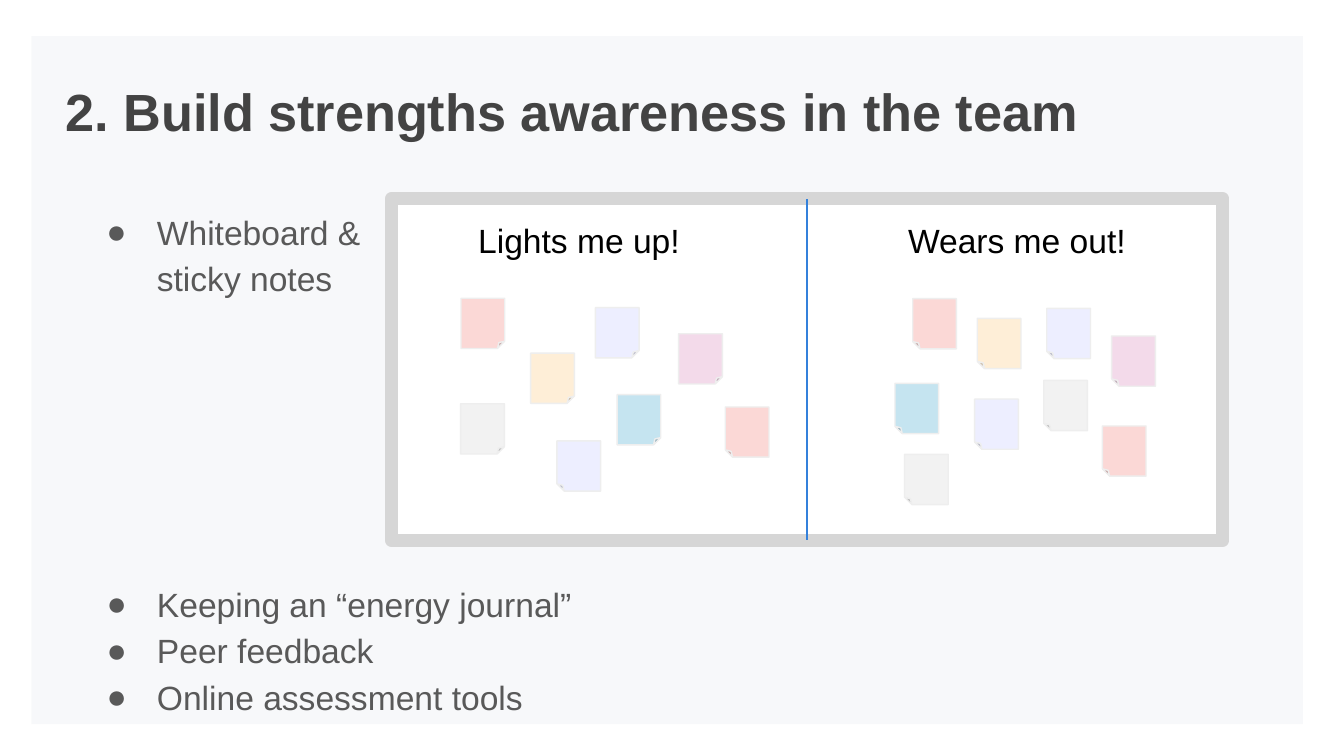
"""Build the strengths awareness slide with its whiteboard of sticky notes."""
from dataclasses import dataclass

import lxml.etree
import pptx
import pptx.dml.color
import pptx.enum.shapes
import pptx.enum.text
import pptx.oxml.ns
import pptx.util

Pt = pptx.util.Pt
SHAPES = pptx.enum.shapes.MSO_SHAPE
ALIGN = pptx.enum.text.PP_ALIGN
PINK, MAUVE, CREAM = "FBD8D6", "F3DAEA", "FEEED7"
GREY, AQUA, LILAC = "F2F2F2", "C5E4F0", "EDEEFF"


@dataclass
class Area:
    left: float
    top: float
    width: float
    height: float

    def lengths(self) -> list:
        return [Pt(value) for value in (self.left, self.top, self.width, self.height)]


@dataclass
class Note:
    left: float
    top: float
    color: str
    flipped: bool = True


@dataclass
class Style:
    size: float = 18
    color: str = "000000"
    bold: bool = False
    bullet: str = ""
    align: ALIGN = ALIGN.LEFT
    inset_top: float = 7.2
    inset_bottom: float = 7.2


NOTES = [
    Note(247, 159.8, PINK, False),
    Note(363.6, 178.8, MAUVE, False),
    Note(284.3, 189.2, CREAM, False),
    Note(246.8, 216.3, GREY, False),
    Note(330.6, 211.4, AQUA, False),
    Note(319, 164.8, LILAC, False),
    Note(489, 160, PINK),
    Note(595.6, 180, MAUVE),
    Note(523.6, 170.6, CREAM),
    Note(559.2, 203.8, GREY),
    Note(479.5, 205.4, AQUA),
    Note(560.8, 165.2, LILAC),
    Note(522.2, 213.8, LILAC),
    Note(590.6, 228.2, PINK),
    Note(298.4, 236.2, LILAC),
    Note(388.6, 218, PINK),
    Note(484.6, 243.4, GREY),
]


def rgb(color: str) -> pptx.dml.color.RGBColor:
    """Turn a hex string into a colour."""
    return pptx.dml.color.RGBColor.from_string(color)


def add_element(parent, tag: str, **attributes: str):
    """Append a DrawingML element to its parent."""
    return lxml.etree.SubElement(parent, pptx.oxml.ns.qn(tag), attributes)


def add_box(page, kind, area: Area, fill: str, line: str = "", weight: float = 0.75):
    """Draw a filled preset shape, outlined when a line colour is given."""
    box = page.shapes.add_shape(kind, *area.lengths())
    box.shadow.inherit = False
    box.fill.solid()
    box.fill.fore_color.rgb = rgb(fill)
    if line:
        box.line.color.rgb = rgb(line)
        box.line.width = Pt(weight)
    else:
        box.line.fill.background()
    return box


def add_bullet(para, symbol: str, color: str) -> None:
    """Give a paragraph a hanging bullet and wider line spacing."""
    para.line_spacing = 1.15
    properties = para._p.get_or_add_pPr()
    properties.set("marL", str(Pt(36)))
    properties.set("indent", str(-Pt(27)))
    bullet_color = add_element(properties, "a:buClr")
    add_element(bullet_color, "a:srgbClr", val=color)
    add_element(properties, "a:buSzPct", val="100000")
    add_element(properties, "a:buFont", typeface="Arial")
    add_element(properties, "a:buChar", char=symbol)


def add_text(page, area: Area, text: str, style: Style) -> None:
    """Place a wrapped text box in one style."""
    box = page.shapes.add_textbox(*area.lengths())
    frame = box.text_frame
    frame.word_wrap = True
    frame.margin_left = frame.margin_right = Pt(7.2)
    frame.margin_top, frame.margin_bottom = Pt(style.inset_top), Pt(style.inset_bottom)
    frame.text = text
    for para in frame.paragraphs:
        para.alignment = style.align
        if style.bullet:
            add_bullet(para, style.bullet, style.color)
        for span in para.runs:
            span.font.name = "Arial"
            span.font.size = Pt(style.size)
            span.font.bold = style.bold
            span.font.color.rgb = rgb(style.color)


def add_divider(page, board, color: str) -> None:
    """Split the board with a line joined to its top and bottom sides."""
    divider = page.shapes.add_connector(pptx.enum.shapes.MSO_CONNECTOR.STRAIGHT, 0, 0, 0, 0)
    divider.begin_connect(board, 0)
    divider.end_connect(board, 2)
    divider.line.color.rgb = rgb(color)
    divider.line.width = Pt(0.75)
    add_element(divider._element.spPr, "a:effectLst")


def add_note(page, note: Note) -> None:
    """Draw a sticky note with its corner folded right or left."""
    area = Area(note.left, note.top, 23.4, 26.9)
    box = add_box(page, SHAPES.FOLDED_CORNER, area, note.color, "EEEEEE")
    if note.flipped:
        box._element.spPr.xfrm.set("flipH", "1")


def main() -> None:
    """Build and save the deck."""
    deck = pptx.Presentation()
    deck.slide_width, deck.slide_height = Pt(720), Pt(405)
    page = deck.slides.add_slide(deck.slide_layouts[6])

    panel = add_box(page, SHAPES.RECTANGLE, Area(16.8, 19.4, 681.2, 368.6), "073763")
    panel_color = panel._element.spPr.find(".//" + pptx.oxml.ns.qn("a:srgbClr"))
    add_element(panel_color, "a:alpha", val="3000")

    title = Style(28, "434343", bold=True, inset_top=10)
    add_text(page, Area(28, 32.4, 671, 45.4), "2. Build strengths awareness in the team", title)

    listing = Style(color="595959", bullet="●")
    methods = "Keeping an “energy journal”\nPeer feedback\nOnline assessment tools"
    add_text(page, Area(41, 302.4, 287.3, 85.7), methods, listing)

    board = add_box(page, SHAPES.RECTANGLE, Area(209.7, 106.5, 445.4, 183), "FFFFFF", "D6D6D6", 7)
    add_divider(page, board, "3481DB")

    heading = Style(align=ALIGN.CENTER, inset_top=3.6, inset_bottom=3.6)
    add_text(page, Area(238.2, 114.5, 144, 29), "Lights me up!", heading)
    heading.align = ALIGN.LEFT
    add_text(page, Area(479.4, 114.5, 139, 29), "Wears me out!", heading)

    for note in NOTES:
        add_note(page, note)

    add_text(page, Area(41, 103, 160.6, 67.7), "Whiteboard & sticky notes", listing)
    deck.save("out.pptx")


if __name__ == "__main__":
    main()
